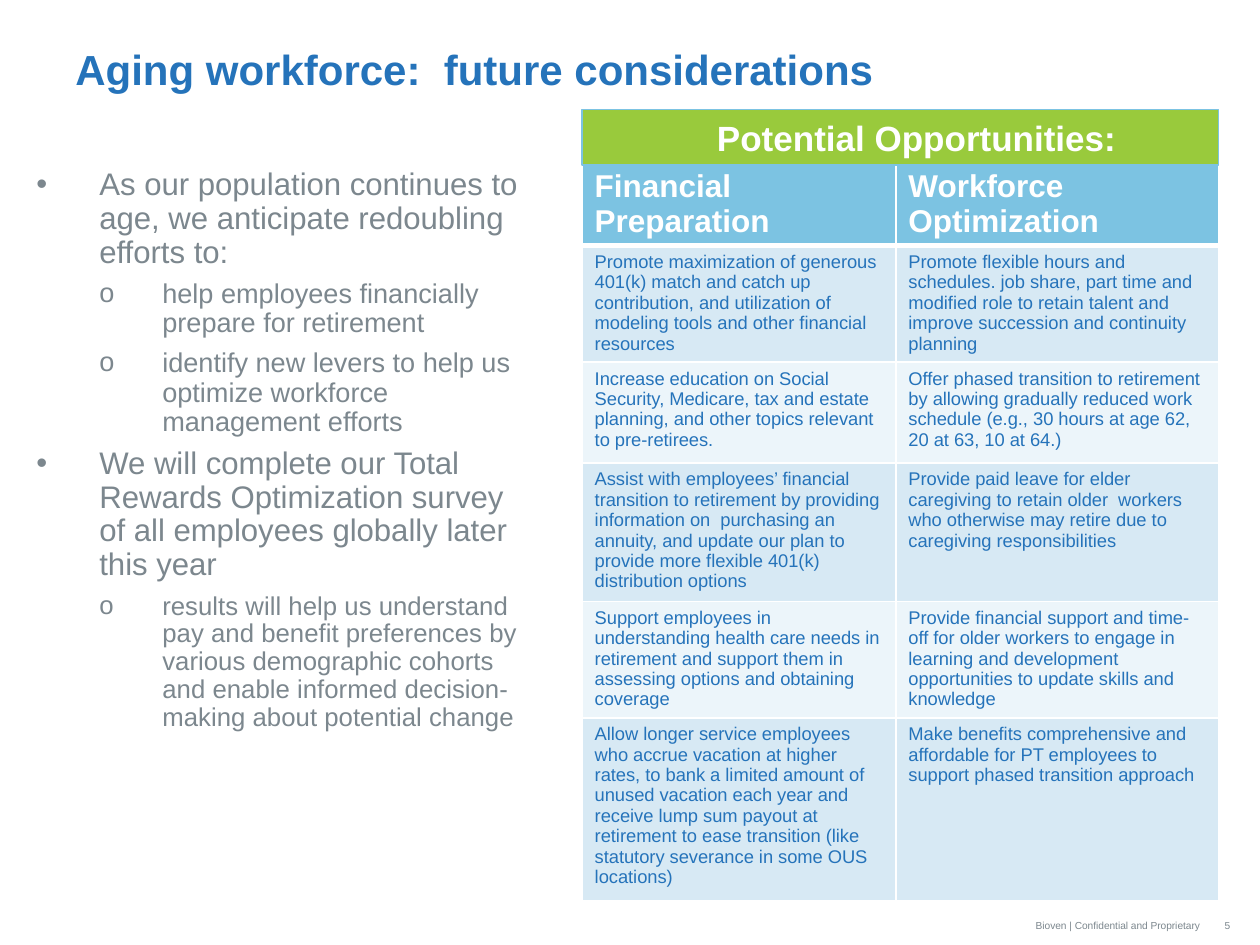
import lxml.etree
import pptx
import pptx.dml.color
import pptx.enum.shapes
import pptx.enum.text
import pptx.oxml.ns
import pptx.util

Inches = pptx.util.Inches
Pt = pptx.util.Pt
Align = pptx.enum.text.PP_ALIGN
Anchor = pptx.enum.text.MSO_ANCHOR

COLORS = {
    "blue": "2573BA",
    "gray": "7C878E",
    "white": "FFFFFF",
    "green": "99CA3C",
    "sky": "7CC3E2",
    "band_dark": "D7E9F4",
    "band_light": "ECF5FA",
}

# (level, size, text)
POINTS = [
    (0, 17.8, "As our population continues to age, we anticipate redoubling  efforts to:"),
    (1, 15.5, "help employees financially prepare for retirement"),
    (1, 15.5, "identify new levers to help us optimize workforce management efforts"),
    (0, 17.8, "We will complete our Total Rewards Optimization survey of all employees "
              "globally later this year"),
    (1, 14.7, "results will help us understand pay and benefit preferences by various "
              "demographic cohorts and enable informed decision-making about potential change"),
]

OPPORTUNITIES = [
    ("Financial Preparation", "Workforce Optimization"),
    ("Promote maximization of generous 401(k) match and catch up contribution, and "
     "utilization of modeling tools and other financial resources",
     "Promote flexible hours and schedules. job share, part time and modified role to "
     "retain talent and improve succession and continuity planning"),
    ("Increase education on Social Security, Medicare, tax and estate planning, and other "
     "topics relevant to pre-retirees.",
     "Offer phased transition to retirement by allowing gradually reduced work schedule "
     "(e.g., 30 hours at age 62, 20 at 63, 10 at 64.)"),
    ("Assist with employees’ financial transition to retirement by providing information on  "
     "purchasing an annuity, and update our plan to provide more flexible 401(k) "
     "distribution options",
     "Provide paid leave for elder caregiving to retain older  workers who otherwise may "
     "retire due to  caregiving responsibilities"),
    ("Support employees in understanding health care needs in retirement and support them in "
     "assessing options and obtaining coverage",
     "Provide financial support and time-off for older workers to engage in learning and "
     "development opportunities to update skills and knowledge"),
    ("Allow longer service employees who accrue vacation at higher rates, to bank a limited "
     "amount of unused vacation each year and receive lump sum payout at retirement to ease "
     "transition (like statutory severance in some OUS locations)",
     "Make benefits comprehensive and affordable for PT employees to support phased "
     "transition approach"),
]
COLUMN_WIDTHS = [2.49, 2.56]
ROW_HEIGHTS = [0.66, 0.9, 0.8, 1.07, 0.91, 1.39]


def rgb(name):
    return pptx.dml.color.RGBColor.from_string(COLORS[name])


def add_element(parent, tag, **attributes):
    return lxml.etree.SubElement(parent, pptx.oxml.ns.qn(tag), attributes)


class SlideBuilder:
    font_name = "Arial"

    def __init__(self, slide):
        self.slide = slide

    def style(self, target, size, color, bold=False):
        """Set the font of a paragraph or a run."""
        target.font.name = self.font_name
        target.font.size = Pt(size)
        target.font.bold = bold
        target.font.color.rgb = rgb(color)

    def text_box(self, left, top, width, height, anchor=Anchor.TOP):
        box = self.slide.shapes.add_textbox(*map(Inches, (left, top, width, height)))
        box.text_frame.word_wrap = True
        box.text_frame.vertical_anchor = anchor
        return box.text_frame

    def title(self, text):
        para = self.text_box(0.5, 0.26, 9, 1.25).paragraphs[0]
        para.text = text
        para.line_spacing = 1.1
        self.style(para, 24, "blue", bold=True)

    def footer(self, text, left, width, align):
        """Small raised text along the bottom edge."""
        para = self.text_box(left, 7.1, width, 0.4, Anchor.BOTTOM).paragraphs[0]
        para.alignment = align
        span = para.add_run()
        span.text = text
        self.style(para, 10, "gray")
        span.font._element.set("baseline", "30000")

    def bullets(self, points, *place):
        frame = self.text_box(*place)
        for index, (level, size, text) in enumerate(points):
            para = frame.add_paragraph() if index else frame.paragraphs[0]
            para.text = text
            para.level = level
            para.line_spacing = 0.9
            para.space_before = Pt(3 if index else 0)
            para.space_after = Pt(3)
            properties = para._p.get_or_add_pPr()
            properties.set("marL", str(Inches(0.5 * (level + 1))))
            properties.set("indent", str(Inches(-0.5)))
            add_element(properties, "a:buFont", typeface=self.font_name)
            add_element(properties, "a:buChar", char="•o"[level])
            self.style(para, size, "gray")

    def borders(self, cell, bottom):
        properties = cell._tc.get_or_add_tcPr()
        for tag, width in (("a:lnL", 1), ("a:lnR", 1), ("a:lnT", 1), ("a:lnB", bottom)):
            line = add_element(properties, tag, w=str(Pt(width)))
            fill = add_element(line, "a:solidFill")
            add_element(fill, "a:srgbClr", val=COLORS["white"])

    def table(self, rows, left, top):
        """Fonts go on the runs, since row heights are measured from them."""
        shape = self.slide.shapes.add_table(
            len(rows), len(COLUMN_WIDTHS), Inches(left), Inches(top),
            Inches(sum(COLUMN_WIDTHS)), Inches(sum(ROW_HEIGHTS)))
        table = shape.table
        for column, width in zip(table.columns, COLUMN_WIDTHS):
            column.width = Inches(width)
        for row, height in zip(table.rows, ROW_HEIGHTS):
            row.height = Inches(height)
        for row_index, texts in enumerate(rows):
            header = row_index == 0
            band = "band_dark" if row_index % 2 else "band_light"
            for column_index, text in enumerate(texts):
                cell = table.cell(row_index, column_index)
                cell.text = text
                cell.margin_bottom = 0
                self.borders(cell, bottom=3 if header else 1)
                cell.fill.solid()
                cell.fill.fore_color.rgb = rgb("sky" if header else band)
                self.style(cell.text_frame.paragraphs[0].runs[0], 18 if header else 10.5,
                           "white" if header else "blue", bold=header)

    def banner(self, text, *place):
        shape = self.slide.shapes.add_shape(
            pptx.enum.shapes.MSO_SHAPE.RECTANGLE, *map(Inches, place))
        shape.shadow.inherit = False
        shape.fill.solid()
        shape.fill.fore_color.rgb = rgb("green")
        shape.line.color.rgb = rgb("sky")
        shape.line.width = Pt(0.75)
        frame = shape.text_frame
        frame.word_wrap = True
        frame.margin_left = Inches(1.07)
        frame.vertical_anchor = Anchor.MIDDLE
        para = frame.paragraphs[0]
        para.text = text
        para.alignment = Align.LEFT
        self.style(para, 20, "white", bold=True)


def main():
    deck = pptx.Presentation()
    deck.slide_width = Inches(10)
    deck.slide_height = Inches(7.5)
    page = SlideBuilder(deck.slides.add_slide(deck.slide_layouts[6]))
    page.footer("5", 9.62, 0.38, Align.LEFT)
    page.footer("Bioven | Confidential and Proprietary", 6.45, 3.17, Align.RIGHT)
    page.title("Aging workforce:  future considerations")
    page.bullets(POINTS, 0.19, 1.29, 4.12, 5.04)
    page.table(OPPORTUNITIES, 4.62, 1.29)
    page.banner("Potential Opportunities:", 4.62, 0.87, sum(COLUMN_WIDTHS), 0.44)
    deck.save("out.pptx")


if __name__ == "__main__":
    main()
